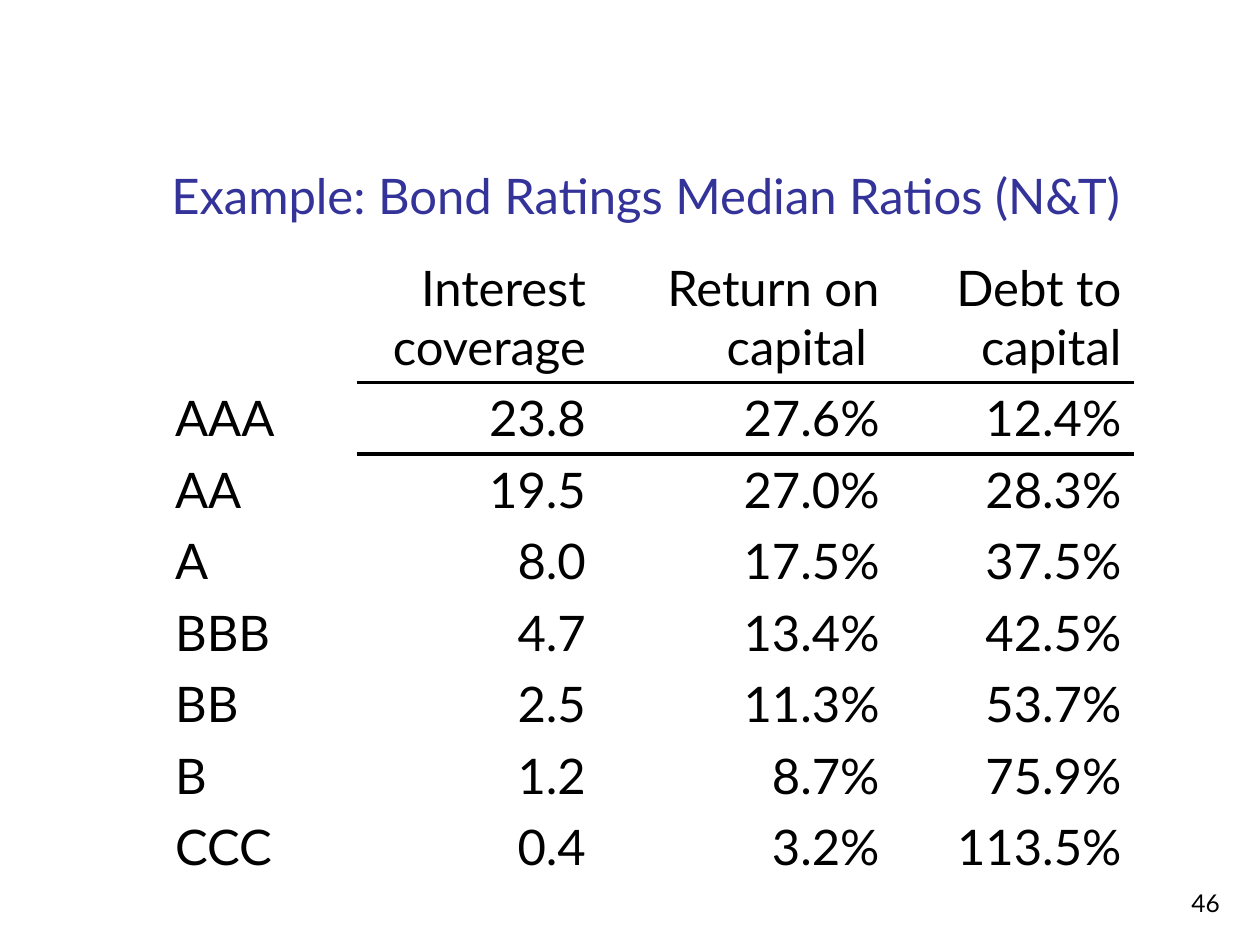
from dataclasses import dataclass

from pptx import Presentation
from pptx.dml.color import RGBColor
from pptx.enum.text import MSO_ANCHOR, PP_ALIGN
from pptx.oxml import parse_xml
from pptx.oxml.ns import nsdecls
from pptx.util import Pt

# Content
TITLE = "Example: Bond Ratings Median Ratios (N&T)"
PAGE_NUMBER = "46"
HEADERS = ["", "Interest coverage", "Return on capital ", "Debt to capital"]
RATINGS = [
    ("AAA", "23.8", "27.6%", "12.4%"),
    ("AA", "19.5", "27.0%", "28.3%"),
    ("A", "8.0", "17.5%", "37.5%"),
    ("BBB", "4.7", "13.4%", "42.5%"),
    ("BB", "2.5", "11.3%", "53.7%"),
    ("B", "1.2", "8.7%", "75.9%"),
    ("CCC", "0.4", "3.2%", "113.5%"),
]


@dataclass(frozen=True)
class Theme:
    font: str = "Lato"
    text: str = "000000"
    title: str = "333399"
    main_size: int = 28
    number_size: int = 14
    rule_width: float = 2.25


THEME = Theme()

# Layout in points
TITLE_BOX = (90.7, 16.6, 613.4, 115.2)
NUMBER_BOX = (554.4, 491.8, 149.8, 36)
TABLE_LEFT, TABLE_TOP = 92.9, 144
COLUMN_WIDTHS = [110.9, 138.2, 167.8, 138.2]
HEADER_HEIGHT, ROW_HEIGHT = 74.4, 40.8
NO_GRID_STYLE = "{2D5ABB26-0587-4C30-8999-92F81FD0307C}"


def write(text_frame, text, size, color, alignment):
    text_frame.text = text
    paragraph = text_frame.paragraphs[0]
    paragraph.alignment = alignment
    for run in paragraph.runs:
        run.font.name = THEME.font
        run.font.size = Pt(size)
        run.font.color.rgb = RGBColor.from_string(color)


def add_border(cell, side):
    border = parse_xml(
        f'<a:{side} {nsdecls("a")} w="{Pt(THEME.rule_width)}"><a:solidFill>'
        f'<a:srgbClr val="{THEME.text}"/></a:solidFill></a:{side}>'
    )
    cell._tc.get_or_add_tcPr().insert(0, border)


def place_title(slide):
    title = slide.shapes.title
    title.left, title.top, title.width, title.height = map(Pt, TITLE_BOX)
    title.text_frame.word_wrap = True
    title.text_frame.vertical_anchor = MSO_ANCHOR.BOTTOM
    write(title.text_frame, TITLE, THEME.main_size, THEME.title, PP_ALIGN.LEFT)


def add_ratings_table(slide):
    rows = [HEADERS, *RATINGS]
    heights = [HEADER_HEIGHT] + [ROW_HEIGHT] * len(RATINGS)
    table = slide.shapes.add_table(
        len(rows), len(HEADERS), Pt(TABLE_LEFT), Pt(TABLE_TOP),
        Pt(sum(COLUMN_WIDTHS)), Pt(sum(heights)),
    ).table
    table.first_row = table.horz_banding = False
    table._tbl.tblPr.find("{*}tableStyleId").text = NO_GRID_STYLE
    for column, width in zip(table.columns, COLUMN_WIDTHS):
        column.width = Pt(width)
    for row, height in zip(table.rows, heights):
        row.height = Pt(height)

    for row_index, values in enumerate(rows):
        for column_index, value in enumerate(values):
            cell = table.cell(row_index, column_index)
            cell.fill.background()
            alignment = PP_ALIGN.RIGHT if column_index else PP_ALIGN.LEFT
            write(cell.text_frame, value, THEME.main_size, THEME.text, alignment)
            # Rule between the headers and the figures
            if column_index and row_index < 2:
                add_border(cell, "lnT" if row_index else "lnB")


def add_page_number(slide):
    text_frame = slide.shapes.add_textbox(*map(Pt, NUMBER_BOX)).text_frame
    text_frame.word_wrap = True
    text_frame.vertical_anchor = MSO_ANCHOR.BOTTOM
    write(text_frame, PAGE_NUMBER, THEME.number_size, THEME.text, PP_ALIGN.RIGHT)


def main():
    presentation = Presentation()
    presentation.slide_width, presentation.slide_height = Pt(720), Pt(540)
    slide = presentation.slides.add_slide(presentation.slide_layouts[5])
    add_page_number(slide)
    place_title(slide)
    add_ratings_table(slide)
    presentation.save("out.pptx")


if __name__ == "__main__":
    main()
